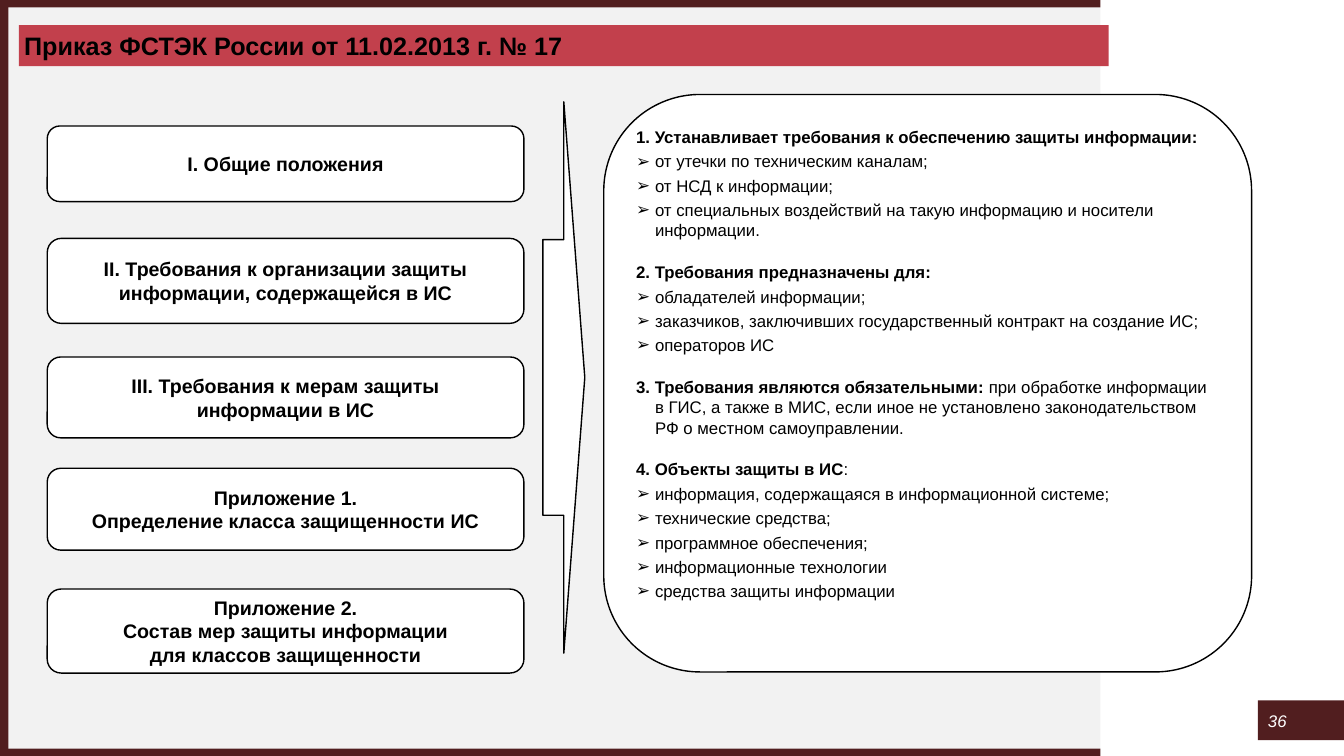
import pptx
import pptx.util
import pptx.dml.color
import pptx.enum.shapes
import pptx.enum.text
import lxml.etree

SHAPE = pptx.enum.shapes.MSO_SHAPE
ALIGN = pptx.enum.text.PP_ALIGN
ANCHOR = pptx.enum.text.MSO_ANCHOR
NS = "http://schemas.openxmlformats.org/drawingml/2006/main"
DARK, RED, GREY, WHITE, BLACK = "511E1F", "C2404C", "F2F2F2", "FFFFFF", "000000"

SECTIONS = [
    (120, 72, "I. Общие положения"),
    (227, 81, "II. Требования к организации защиты информации, содержащейся в ИС"),
    (340, 77, "III. Требования к мерам защиты\vинформации в ИС"),
    (446, 78, "Приложение 1.\nОпределение класса защищенности ИС"),
    (561, 80, "Приложение 2.\nСостав мер защиты информации\nдля классов защищенности"),
]

POINTS = [
    ("1. Устанавливает требования к обеспечению защиты информации:", "", [
        "от утечки по техническим каналам;",
        "от НСД к информации;",
        "от специальных воздействий на такую информацию и носители информации.",
    ]),
    ("2. Требования предназначены для:", "", [
        "обладателей информации;",
        "заказчиков, заключивших государственный контракт на создание ИС;",
        "операторов ИС",
    ]),
    ("3. Требования являются обязательными: ",
     "при обработке информации в ГИС, а также в МИС, если иное не установлено "
     "законодательством РФ о местном самоуправлении.", []),
    ("4. Объекты защиты в ИС", ":", [
        "информация, содержащаяся в информационной системе;",
        "технические средства;",
        "программное обеспечения;",
        "информационные технологии",
        "средства защиты информации",
    ]),
]


def px(n):
    """Turn pixels into EMU."""
    return pptx.util.Emu(n * 9525)


def rgb(color):
    """Turn a hex string into a colour."""
    return pptx.dml.color.RGBColor.from_string(color)


def add_box(s, kind, box, fill, line=None):
    """Add a filled preset shape in the given box."""
    sp = s.shapes.add_shape(kind, *map(px, box))
    sp.shadow.inherit = False
    sp.fill.solid()
    sp.fill.fore_color.rgb = rgb(fill)
    if line:
        sp.line.color.rgb = rgb(line)
        sp.line.width = pptx.util.Pt(1)
    else:
        sp.line.fill.background()
    return sp


def set_frame(sp, inset, anchor=ANCHOR.MIDDLE):
    """Set wrapping, insets and anchor, and return the text frame."""
    tf = sp.text_frame
    tf.word_wrap = True
    tf.margin_left = tf.margin_right = tf.margin_top = tf.margin_bottom = px(inset)
    tf.vertical_anchor = anchor
    return tf


def write(tf, text, size=12, color=BLACK, bold=False, italic=False, align=ALIGN.LEFT,
          hang=0, bullet=None, before=0, after=0, tail=""):
    """Write one paragraph, with an optional plain tail, into the frame."""
    p = tf.paragraphs[0] if not tf.text else tf.add_paragraph()
    p.text = text
    p.alignment = align
    p.space_before, p.space_after = pptx.util.Pt(before), pptx.util.Pt(after)
    pPr = p._p.get_or_add_pPr()
    pPr.set("marL", str(px(hang)))
    pPr.set("indent", str(px(-hang)))
    if bullet:
        lxml.etree.SubElement(pPr, f"{{{NS}}}buFont", typeface="Arial")
        lxml.etree.SubElement(pPr, f"{{{NS}}}buChar", char=bullet)
    else:
        lxml.etree.SubElement(pPr, f"{{{NS}}}buNone")
    for r in p.runs:
        r.font.bold = bold
    if tail:
        r = p.add_run()
        r.text = tail
        r.font.bold = False
    for r in p.runs:
        r.font.name, r.font.size = "Arial", pptx.util.Pt(size)
        r.font.italic = italic
        r.font.color.rgb = rgb(color)


def add_backdrop(s, width, height):
    """Draw the grey field and its dark frame."""
    edge = 7
    add_box(s, SHAPE.RECTANGLE, (edge, edge, width - edge, height - 2 * edge), GREY)
    for y in (0, height - edge):
        add_box(s, SHAPE.RECTANGLE, (0, y, width, edge), DARK)
    add_box(s, SHAPE.RECTANGLE, (0, 0, edge + 1, height), DARK)


def add_title(s, box, text):
    """Draw the title bar."""
    tf = set_frame(add_box(s, SHAPE.RECTANGLE, box, RED), 5)
    write(tf, text, size=18, bold=True)


def add_sections(s, left, width):
    """Draw the column of document sections."""
    for top, height, text in SECTIONS:
        sp = add_box(s, SHAPE.ROUNDED_RECTANGLE, (left, top, width, height), WHITE, BLACK)
        tf = set_frame(sp, 4)
        for line in text.split("\n"):
            write(tf, line, size=14, bold=True, align=ALIGN.CENTER)


def add_summary(s, box):
    """Draw the rounded panel with headed bullet lists."""
    sp = add_box(s, SHAPE.ROUNDED_RECTANGLE, box, WHITE, BLACK)
    tf = set_frame(sp, 4, ANCHOR.TOP)
    for i, (head, tail, items) in enumerate(POINTS):
        write(tf, head, bold=True, tail=tail, hang=18, before=12.5 if i else 0, after=3)
        for item in items:
            write(tf, item, hang=18, bullet="➢", after=3)


def add_page_number(s, box, text):
    """Draw the page number on its dark tab."""
    x, y, w, h = box
    add_box(s, SHAPE.RECTANGLE, box, DARK)
    side = 29
    sp = s.shapes.add_textbox(px(x + 4), px(y + 5), px(side), px(side))
    write(set_frame(sp, 0), text, color=WHITE, italic=True, align=ALIGN.CENTER)


def main():
    """Build the slide and save it."""
    prs = pptx.Presentation()
    prs.slide_width, prs.slide_height = px(1280), px(720)
    s = prs.slides.add_slide(prs.slide_layouts[6])
    add_backdrop(s, 1048, 720)
    add_sections(s, 45, 454)
    add_summary(s, (575, 90, 617, 550))
    add_box(s, SHAPE.RIGHT_ARROW, (517, 97, 40, 525), WHITE, BLACK)
    add_title(s, (18, 24, 1038, 39), "Приказ ФСТЭК России от 11.02.2013 г. № 17")
    add_page_number(s, (1198, 667, 82, 38), "36")
    prs.save("out.pptx")


if __name__ == "__main__":
    main()
